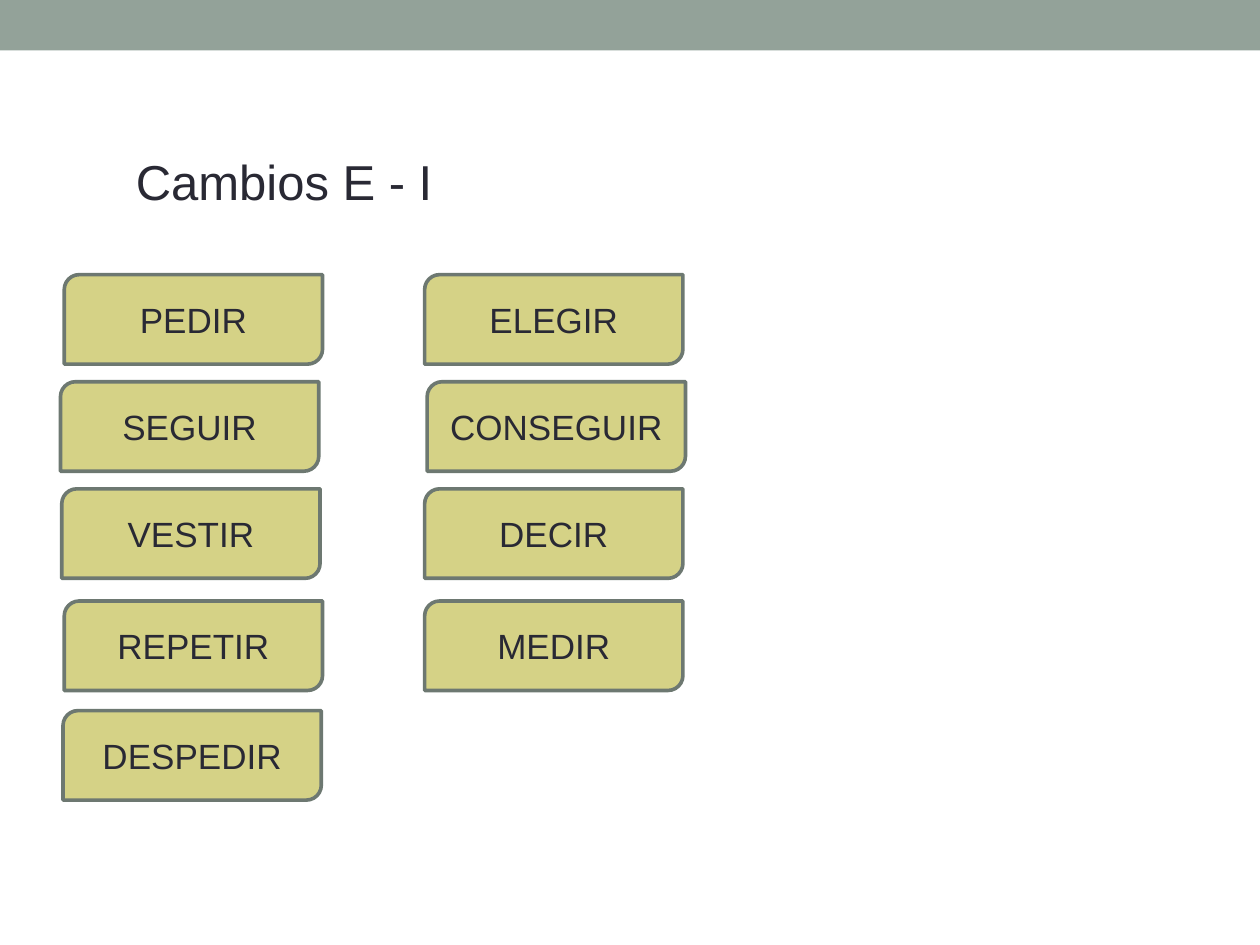
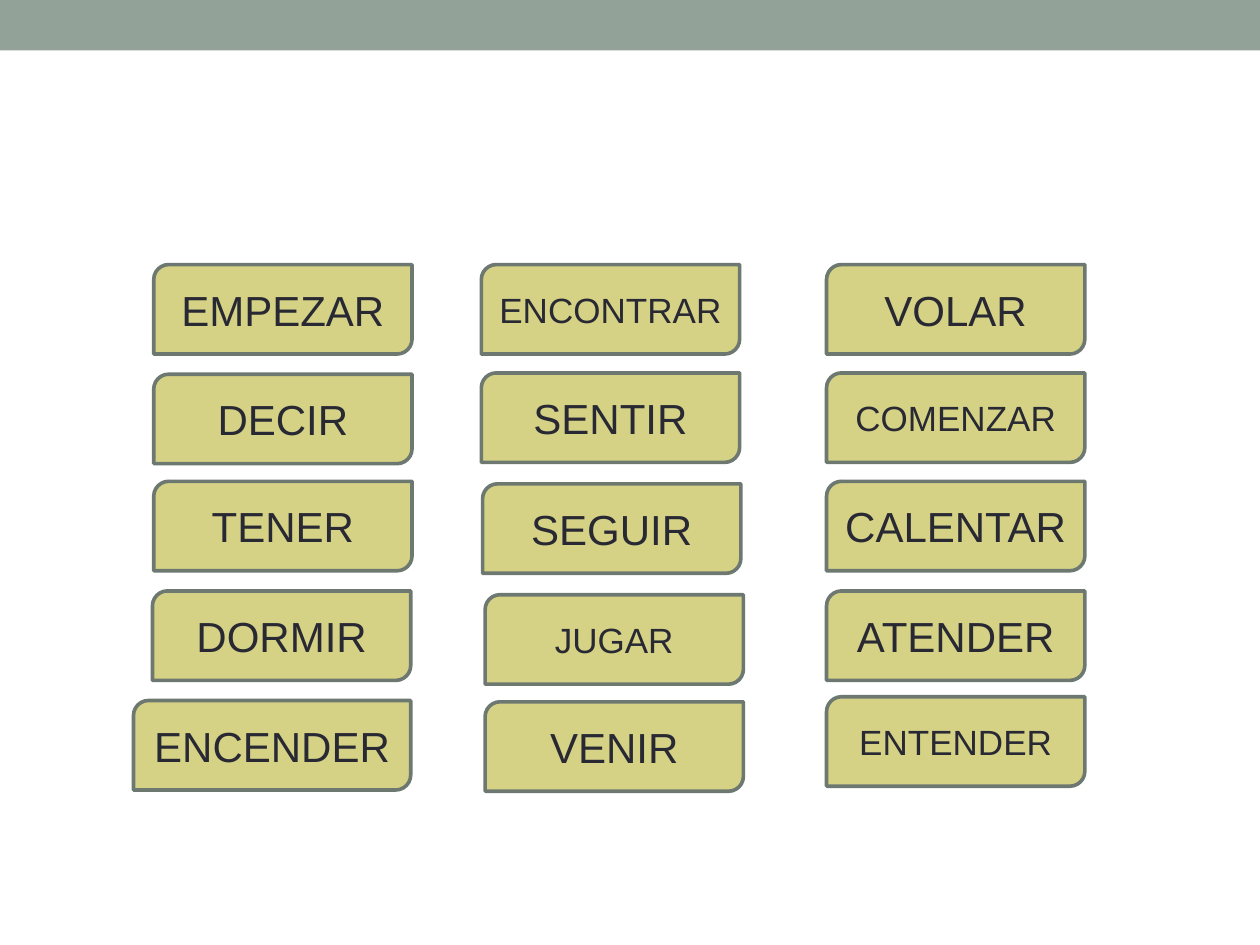
from pptx import Presentation
from pptx.dml.color import RGBColor
from pptx.enum.shapes import MSO_SHAPE
from pptx.enum.text import MSO_ANCHOR, MSO_AUTO_SIZE, PP_ALIGN
from pptx.util import Inches, Pt

SAGE = RGBColor(0x93, 0xA2, 0x99)
OLIVE = RGBColor(0xD5, 0xD2, 0x86)
SLATE = RGBColor(0x6D, 0x78, 0x71)
INK = RGBColor(0x29, 0x29, 0x34)
FONT = "Arial"
WIDE, HIGH = 10, 7.5
BAND = 0.4
CARD_W, CARD_H = 2.05, 0.71
PITCH = 0.87  # from one card's top to the next
SMALL, LARGE = 20, 24

# Each card: verb, font size, nudge right and down from its grid cell.
# A fifth value widens the card to the left.
SLIDES = [
    {
        "title": "Cambios E - I",
        "top": 2.18,
        "lefts": [0.5, 3.37],
        "columns": [
            [("PEDIR", SMALL, 0.01, 0),
             ("SEGUIR", SMALL, -0.02, -0.02),
             ("VESTIR", SMALL, -0.01, -0.04),
             ("REPETIR", SMALL, 0.01, -0.02),
             ("DESPEDIR", SMALL, 0, -0.02)],
            [("ELEGIR", SMALL, 0, 0),
             ("CONSEGUIR", SMALL, 0.02, -0.02),
             ("DECIR", SMALL, 0, -0.04),
             ("MEDIR", SMALL, 0, -0.02)],
        ],
    },
    {
        "title": None,
        "top": 2.1,
        "lefts": [1.22, 3.82, 6.56],
        "columns": [
            [("EMPEZAR", LARGE, 0, 0),
             ("DECIR", LARGE, 0, 0),
             ("TENER", LARGE, 0, -0.02),
             ("DORMIR", LARGE, -0.01, -0.02),
             ("ENCENDER", LARGE, -0.01, -0.02, 0.15)],
            [("ENCONTRAR", SMALL, 0, 0),
             ("SENTIR", LARGE, 0, -0.01),
             ("SEGUIR", LARGE, 0.01, 0),
             ("JUGAR", SMALL, 0.03, 0.01),
             ("VENIR", LARGE, 0.03, -0.01)],
            [("VOLAR", LARGE, 0, 0),
             ("COMENZAR", SMALL, 0, -0.01),
             ("CALENTAR", LARGE, 0, -0.02),
             ("ATENDER", LARGE, 0, -0.02),
             ("ENTENDER", SMALL, 0, -0.05)],
        ],
    },
]


def write(frame, text, size):
    frame.word_wrap = True
    para = frame.paragraphs[0]
    para.text = text
    para.font.name = FONT
    para.font.size = Pt(size)
    para.font.color.rgb = INK
    return para


def add_block(slide, kind, box, fill):
    block = slide.shapes.add_shape(kind, *map(Inches, box))
    block.shadow.inherit = False
    block.fill.solid()
    block.fill.fore_color.rgb = fill
    return block


def add_band(slide):
    band = add_block(slide, MSO_SHAPE.RECTANGLE, (0, 0, WIDE, BAND), SAGE)
    band.line.fill.background()


def add_title(slide, text):
    box = slide.shapes.add_textbox(*map(Inches, (0.98, 1.15, 5.12, 0.57)))
    write(box.text_frame, text, 28)
    box.text_frame.auto_size = MSO_AUTO_SIZE.SHAPE_TO_FIT_TEXT


def add_card(slide, left, top, verb, size, right, down, extra=0):
    box = (left + right - extra, top + down, CARD_W + extra, CARD_H)
    card = add_block(slide, MSO_SHAPE.ROUND_2_DIAG_RECTANGLE, box, OLIVE)
    card.line.color.rgb = SLATE
    card.line.width = Pt(2.08)
    card.text_frame.vertical_anchor = MSO_ANCHOR.MIDDLE
    write(card.text_frame, verb, size).alignment = PP_ALIGN.CENTER


def main():
    deck = Presentation()
    deck.slide_width, deck.slide_height = Inches(WIDE), Inches(HIGH)
    for page in SLIDES:
        slide = deck.slides.add_slide(deck.slide_layouts[6])
        add_band(slide)
        if page["title"]:
            add_title(slide, page["title"])
        for left, cards in zip(page["lefts"], page["columns"]):
            for row, card in enumerate(cards):
                add_card(slide, left, page["top"] + row * PITCH, *card)
    deck.save("out.pptx")


if __name__ == "__main__":
    main()
